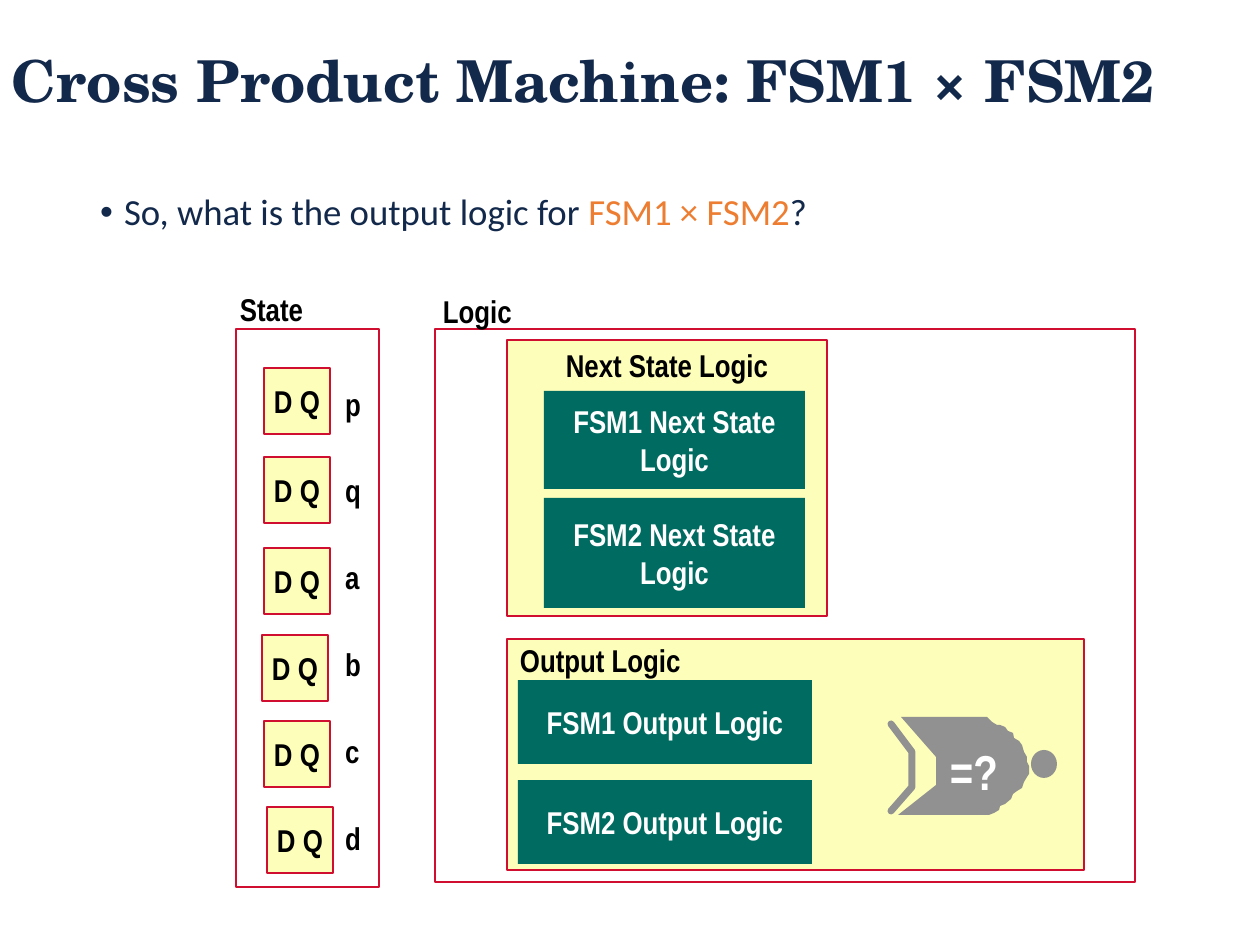
import pptx
import pptx.util
from pptx.dml.color import RGBColor
from pptx.enum.shapes import MSO_SHAPE
from pptx.enum.text import MSO_ANCHOR, MSO_AUTO_SIZE, PP_ALIGN
from pptx.oxml.ns import qn
from lxml import etree

SCALE = 914400 / 126  # EMU per px

THEME = {
    "navy": "13294B", "orange": "ED7D31", "red": "CF0E30", "cream": "FCFEB9",
    "green": "006B61", "grey": "919191", "black": "000000", "white": "FFFFFF",
    "title_font": "TeX Gyre Schola", "body_font": "Calibri",
    "label_font": "Arial Narrow",
    "title_size": 33, "body_size": 21, "label_size": 18, "gate_size": 28,
}

TITLE = "Cross Product Machine: FSM1 × FSM2"
QUESTION = [("So, what is the output logic for", "navy"),
            (" FSM1 × FSM2", "orange"), ("?", "navy")]

STATE_FRAME = (236, 329, 143, 558)
LOGIC_FRAME = (435, 329, 700, 553)
FRAME_LABELS = [("State", (227, 284, 100, 50)), ("Logic", (430, 286, 100, 50))]

FLIP_FLOP_SIZE = 66
FLIP_FLOPS = [(264, 368), (264, 457), (264, 548),
              (262, 635), (264, 721), (267, 807)]
STATE_BITS = ["p", "q", "a", "b", "c", "d"]
STATE_BITS_BOX = (332, 373, 46, 494)

# heading, box, alignment, top inset
LOGIC_GROUPS = [
    ("Next State Logic", (507, 340, 320, 276), PP_ALIGN.CENTER, 6),
    ("Output Logic", (507, 639, 577, 231), PP_ALIGN.LEFT, 2),
]
LOGIC_BLOCKS = [
    (["FSM1 Next State", "Logic"], (544, 391, 261, 98)),
    (["FSM2 Next State", "Logic"], (544, 498, 261, 110)),
    (["FSM1 Output Logic"], (518, 680, 294, 84)),
    (["FSM2 Output Logic"], (518, 780, 294, 84)),
]

GATE_BODY = [
    (901, 717), (987, 717), (992, 722), (997, 725), (1000, 725), (1005, 727),
    (1008, 731), (1013, 733), (1014, 738), (1019, 741), (1022, 745),
    (1024, 752), (1027, 757), (1027, 762), (1029, 766), (1029, 774),
    (1027, 777), (1024, 782), (1022, 788), (1017, 791), (1013, 794),
    (1011, 799), (1005, 804), (1000, 806), (999, 810), (994, 813),
    (989, 815), (898, 815), (936, 785), (936, 757),
]
GATE_INPUT_ARC = [(891, 724), (912, 752), (912, 787), (891, 811)]
GATE_BUBBLE = (1031, 750, 26, 28)
GATE_LABEL = ("=?", (937, 735, 90, 72))


def px(length):
    return pptx.util.Emu(round(length * SCALE))


def color(name):
    return RGBColor.from_string(THEME[name])


def paint(shape, fill=None, line=None, width=1):
    shape.shadow.inherit = False
    if fill:
        shape.fill.solid()
        shape.fill.fore_color.rgb = color(fill)
    else:
        shape.fill.background()
    if line:
        shape.line.color.rgb = color(line)
        shape.line.width = pptx.util.Pt(width)
    else:
        shape.line.fill.background()


def add_block(slide, box, fill=None, line=None, kind=MSO_SHAPE.RECTANGLE):
    shape = slide.shapes.add_shape(kind, *map(px, box))
    paint(shape, fill, line)
    return shape


def add_box(slide, box):
    return slide.shapes.add_textbox(*map(px, box))


def add_outline(slide, points, close):
    builder = slide.shapes.build_freeform(*points[0], scale=SCALE)
    builder.add_line_segments(points[1:], close=close)
    return builder.convert_to_shape()


def set_frame(shape, anchor, insets, wrap=False):
    """Insets are (side, top) in px; the bottom equals the top."""
    frame = shape.text_frame
    frame.word_wrap = wrap
    frame.auto_size = MSO_AUTO_SIZE.NONE
    frame.vertical_anchor = anchor
    side, top = map(px, insets)
    frame.margin_left = frame.margin_right = side
    frame.margin_top = frame.margin_bottom = top
    return frame


def add_span(para, text, tone, role="label", size=None, bold=True):
    span = para.add_run()
    span.text = text
    span.font.name = THEME[role + "_font"]
    span.font.size = pptx.util.Pt(THEME[size or role + "_size"])
    span.font.bold = bold
    span.font.color.rgb = color(tone)


def write_lines(frame, lines, tone, align=PP_ALIGN.LEFT, size=None,
                spacing=None, gap=0):
    for index, line in enumerate(lines):
        para = frame.add_paragraph() if index else frame.paragraphs[0]
        para.alignment = align
        if spacing:
            para.line_spacing = spacing
        if index and gap:
            para.space_before = pptx.util.Pt(gap)
        add_span(para, line, tone, size=size)


def add_label(slide, lines, box, tone="black", **style):
    frame = set_frame(add_box(slide, box), MSO_ANCHOR.TOP, (13, 6), wrap=True)
    write_lines(frame, lines, tone, **style)


def add_heading(slide):
    frame = set_frame(add_box(slide, (0, 31, 1260, 105)), MSO_ANCHOR.MIDDLE,
                      (12, 6), wrap=True)
    para = frame.paragraphs[0]
    para.line_spacing = 0.9
    add_span(para, TITLE, "navy", "title")

    frame = set_frame(add_box(slide, (88, 188, 1089, 102)), MSO_ANCHOR.TOP,
                      (12, 6), wrap=True)
    para = frame.paragraphs[0]
    para.line_spacing = 0.9
    settings = para._p.get_or_add_pPr()
    settings.set("marL", str(px(24)))
    settings.set("indent", str(px(-24)))
    etree.SubElement(settings, qn("a:buFont")).set("typeface", "Arial")
    etree.SubElement(settings, qn("a:buChar")).set("char", "•")
    for text, tone in QUESTION:
        add_span(para, text, tone, "body", bold=False)


def add_state(slide):
    add_block(slide, STATE_FRAME, line="red")
    for left, top in FLIP_FLOPS:
        shape = add_block(slide, (left, top, FLIP_FLOP_SIZE, FLIP_FLOP_SIZE),
                          "cream", "red")
        frame = set_frame(shape, MSO_ANCHOR.MIDDLE, (13, 6))
        write_lines(frame, ["D Q"], "black", PP_ALIGN.CENTER)
    add_label(slide, STATE_BITS, STATE_BITS_BOX, spacing=1.15, gap=24.8)


def add_logic(slide):
    add_block(slide, LOGIC_FRAME, line="red")
    for heading, box, align, inset in LOGIC_GROUPS:
        frame = set_frame(add_block(slide, box, "cream", "red"),
                          MSO_ANCHOR.TOP, (13, inset))
        write_lines(frame, [heading], "black", align)
    for lines, box in LOGIC_BLOCKS:
        frame = set_frame(add_block(slide, box, "green"),
                          MSO_ANCHOR.MIDDLE, (13, 6))
        write_lines(frame, lines, "white", PP_ALIGN.CENTER)


def add_gate(slide):
    paint(add_outline(slide, GATE_BODY, close=True), "grey")
    arc = add_outline(slide, GATE_INPUT_ARC, close=False)
    paint(arc, line="grey", width=4)
    arc.line._get_or_add_ln().set("cap", "rnd")
    add_block(slide, GATE_BUBBLE, "grey", kind=MSO_SHAPE.OVAL)
    text, box = GATE_LABEL
    add_label(slide, [text], box, "white", size="gate_size")


def main():
    deck = pptx.Presentation()
    deck.slide_width, deck.slide_height = px(1260), px(945)
    page = deck.slides.add_slide(deck.slide_layouts[6])
    add_heading(page)
    add_state(page)
    add_logic(page)
    for text, box in FRAME_LABELS:
        add_label(page, [text], box)
    add_gate(page)
    deck.save("out.pptx")


if __name__ == "__main__":
    main()
